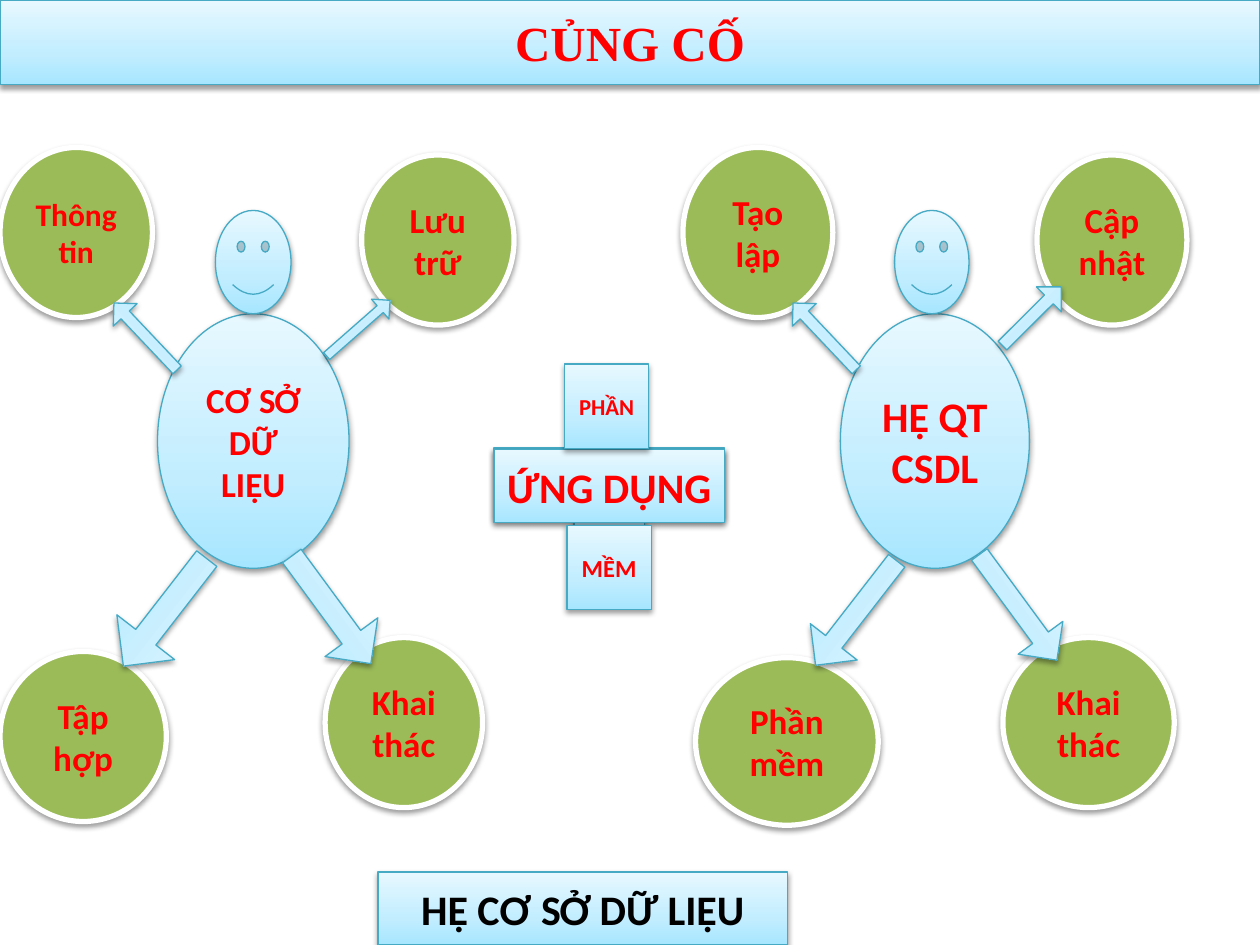
"""Build the review slide: two stick figures and a cross of labels."""
from dataclasses import dataclass

import pptx
import pptx.dml.color
import pptx.enum.shapes
import pptx.enum.text
import pptx.oxml
import pptx.oxml.ns
import pptx.util
from lxml import etree

COLS, ROWS = 100, 75
WIDE, HIGH = pptx.util.Inches(10), pptx.util.Inches(7.5)
HUES = {
    "low": "A7E6FF", "mid": "C1EDFF", "top": "E7F8FF", "edge": "46AAC5",
    "green": "9BBB59", "white": "FFFFFF", "red": "FF0000", "black": "000000",
}
STOPS = (("low", 0), ("mid", 35), ("top", 100))
KIND = pptx.enum.shapes.MSO_SHAPE
RECT, OVAL, ARROW = KIND.RECTANGLE, KIND.OVAL, KIND.RIGHT_ARROW
FACE, PLUS = KIND.SMILEY_FACE, KIND.CROSS
SLIM = (0.349, 0.5)


@dataclass(frozen=True)
class Part:
    """A shape placed in columns and rows of the grid."""
    kind: KIND
    x: float
    y: float
    w: float
    h: float
    text: str = ""
    size: int = 20
    turn: float = 0
    adj: tuple = ()
    hue: str = "red"
    font: str = "Calibri"
    ball: bool = False


def ball(x: float, y: float, w: float, h: float, text: str, size: int = 20) -> Part:
    """Return a green bubble."""
    return Part(OVAL, x, y, w, h, text, size, ball=True)


def limb(x: float, y: float, w: float, h: float, turn: float) -> Part:
    """Return an arm or a leg."""
    return Part(ARROW, x, y, w, h, turn=turn, adj=SLIM)


def box(x: float, y: float, w: float, h: float, text: str, size: int, **more) -> Part:
    """Return a label box."""
    return Part(RECT, x, y, w, h, text, size, **more)


TITLE = box(0, 0, COLS, 6.7, "CỦNG CỐ", 28, font="Times New Roman")
PARTS = (
    Part(OVAL, 12.5, 24.9, 15.2, 20.2, "CƠ SỞ DỮ LIỆU"),
    ball(0, 51.7, 13.2, 13.5, "Tập hợp"),
    ball(25.8, 50.6, 12.5, 13.5, "Khai thác"),
    ball(0, 11.7, 12.1, 13.5, "Thông tin", 18),
    ball(28.7, 12.3, 12.1, 13.5, "Lưu trữ"),
    limb(21, 45.8, 10.6, 5.2, 53.7),
    limb(7.9, 25.4, 7.3, 2.6, 226.6),
    limb(7.7, 45.7, 10.8, 5.8, 127.8),
    Part(FACE, 17.1, 16.7, 6, 8.2),
    limb(25.1, 25, 6.7, 2.1, 318.7),
    Part(OVAL, 66.7, 24.9, 15, 20.2, "HỆ QT CSDL", 24),
    ball(55.2, 52.2, 14.5, 13.3, "Phần mềm"),
    ball(79.6, 50.6, 13.6, 13.5, "Khai thác"),
    ball(54.2, 11.7, 11.9, 13.5, "Tạo lập"),
    ball(82.3, 12.3, 11.9, 13.5, "Cập nhật"),
    limb(75.6, 46, 10.4, 4.4, 53.7),
    limb(61.8, 25.4, 7.3, 2.6, 226.6),
    limb(62.7, 46.3, 10.5, 4.7, 127.8),
    Part(FACE, 71, 16.7, 5.9, 8.2),
    limb(78.6, 23.7, 6.6, 2.8, 315.1),
    Part(PLUS, 39.2, 29.2, 18.3, 18.3, adj=(0.348,)),
    box(39.2, 35.7, 18.3, 5.8, "ỨNG DỤNG", 24),
    box(44.8, 28.9, 6.7, 6.7, "PHẦN", 13),
    box(45, 41.7, 6.7, 6.7, "MỀM", 14),
    box(30, 69.2, 32.5, 5.8, "HỆ CƠ SỞ DỮ LIỆU", 24, hue="black"),
)


def rgb(hue: str) -> pptx.dml.color.RGBColor:
    """Look a colour up by name."""
    return pptx.dml.color.RGBColor.from_string(HUES[hue])


def place(part: Part) -> tuple[int, ...]:
    """Turn grid units into slide lengths."""
    return (int(part.x * WIDE / COLS), int(part.y * HIGH / ROWS),
            int(part.w * WIDE / COLS), int(part.h * HIGH / ROWS))


def blend(shape) -> None:
    """Fill a shape with the blue gradient, dark at the foot."""
    shape.fill.gradient()
    shape.fill.gradient_angle = 90
    qn = pptx.oxml.ns.qn
    stops = shape._element.spPr.find(f".//{qn('a:gsLst')}")
    for old in list(stops):
        stops.remove(old)
    for hue, pos in STOPS:
        stop = etree.SubElement(stops, qn("a:gs"), pos=str(pos * 1000))
        etree.SubElement(stop, qn("a:srgbClr"), val=HUES[hue])


def shade(shape) -> None:
    """Drop a soft shadow below a shape."""
    shape.shadow.inherit = False
    glow = shape._element.spPr.find(pptx.oxml.ns.qn("a:effectLst"))
    glow.append(pptx.oxml.parse_xml(
        f'<a:outerShdw {pptx.oxml.ns.nsdecls("a")} blurRad="40000" dist="20000" '
        f'dir="5400000" rotWithShape="0"><a:srgbClr val="{HUES["black"]}">'
        '<a:alpha val="38000"/></a:srgbClr></a:outerShdw>'))


def write(shape, part: Part) -> None:
    """Set the bold centred text of a shape."""
    frame = shape.text_frame
    frame.text = part.text
    frame.word_wrap = True
    frame.vertical_anchor = pptx.enum.text.MSO_ANCHOR.MIDDLE
    if part.kind == RECT:
        frame.margin_left = frame.margin_right = pptx.util.Inches(0.05)
    para = frame.paragraphs[0]
    para.alignment = pptx.enum.text.PP_ALIGN.CENTER
    font = para.font
    font.name, font.size, font.bold = part.font, pptx.util.Pt(part.size), True
    font.color.rgb = rgb(part.hue)


def style(shape, part: Part) -> None:
    """Give a shape its fill, line, shadow and text."""
    if part.ball:
        shape.fill.solid()
        shape.fill.fore_color.rgb = rgb("green")
    else:
        blend(shape)
    shape.line.color.rgb = rgb("white" if part.ball else "edge")
    shape.line.width = pptx.util.Pt(3 if part.ball else 0.75)
    shade(shape)
    if part.text:
        write(shape, part)


def draw(slide, part: Part) -> None:
    """Add one part to the slide."""
    shape = slide.shapes.add_shape(part.kind, *place(part))
    shape.rotation = part.turn
    for i, share in enumerate(part.adj):
        shape.adjustments[i] = share
    style(shape, part)


def main() -> None:
    """Build and save the slide."""
    deck = pptx.Presentation()
    deck.slide_width, deck.slide_height = WIDE, HIGH
    slide = deck.slides.add_slide(deck.slide_layouts[5])
    head = slide.shapes.title
    head.left, head.top, head.width, head.height = place(TITLE)
    style(head, TITLE)
    for part in PARTS:
        draw(slide, part)
    deck.save("out.pptx")


if __name__ == "__main__":
    main()
